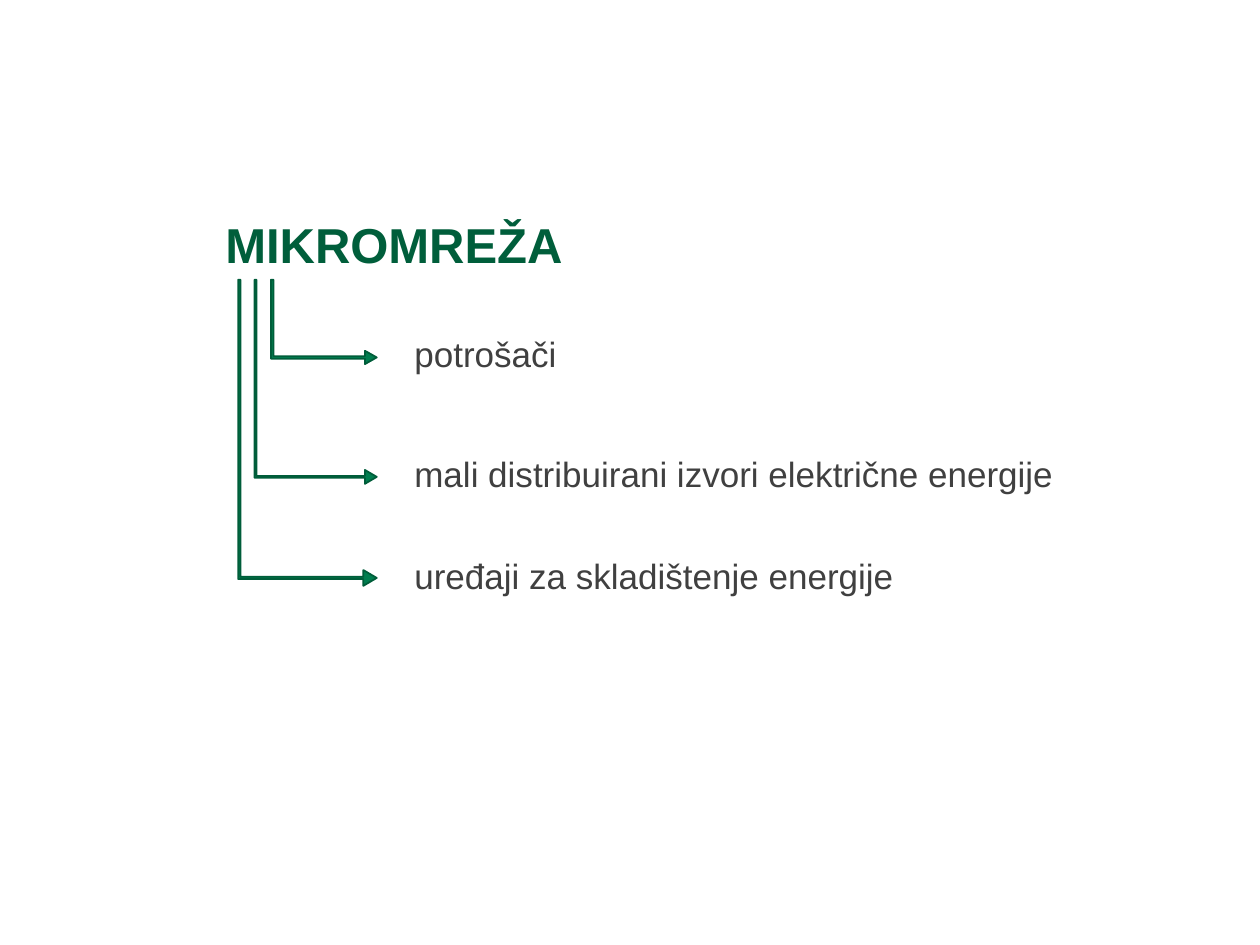
from pptx import Presentation
from pptx.dml.color import RGBColor
from pptx.enum.shapes import MSO_SHAPE
from pptx.enum.text import MSO_AUTO_SIZE
from pptx.util import Inches, Pt

BENT_ARROW = MSO_SHAPE.BENT_UP_ARROW
FIT_SHAPE = MSO_AUTO_SIZE.SHAPE_TO_FIT_TEXT

TITLE_GREEN = RGBColor(0x00, 0x5E, 0x3B)
ARROW_FILL = RGBColor(0x00, 0x7E, 0x4F)
ARROW_LINE = RGBColor(0x00, 0x5D, 0x3A)
TEXT_GRAY = RGBColor(0x40, 0x40, 0x40)

ARROW_TOP = 2.22
ARROW_TIP = 2.99
FIRST_STEM = 2.15
STEM_STEP = 0.13
TIP_OFFSET = 0.3  # from the top of a label to the bottom of its arrow
LABEL_LEFT = 3.19
LABEL_HEIGHT = 0.44

# Label, top, width, arrow adjustments
COMPONENTS = [
    ("potrošači", 2.59, 2.19, (0.031, 0.079, 0.14)),
    ("mali distribuirani izvori električne energije", 3.54, 6.1,
     (0.016, 0.057, 0.097)),
    ("uređaji za skladištenje energije", 4.35, 4.9, (0.016, 0.057, 0.097)),
]


class SlideBuilder:
    font_name = "Arial"

    def __init__(self, slide):
        self.slide = slide

    def text(self, content, left, top, width, height, size, color, bold=False):
        box = self.slide.shapes.add_textbox(
            Inches(left), Inches(top), Inches(width), Inches(height))
        frame = box.text_frame
        frame.word_wrap = True
        frame.auto_size = FIT_SHAPE
        run = frame.paragraphs[0].add_run()
        run.text = content
        run.font.name = self.font_name
        run.font.size = Pt(size)
        run.font.bold = bold
        run.font.color.rgb = color

    def branch_arrow(self, left, top, right, bottom, adjustments):
        """Draw an arrow that runs down and then right within the given bounds."""
        # The shape is turned by 90 degrees, so its width and height swap
        width, height = bottom - top, right - left
        center_x, center_y = (left + right) / 2, (top + bottom) / 2
        shape = self.slide.shapes.add_shape(
            BENT_ARROW, Inches(center_x - width / 2),
            Inches(center_y - height / 2), Inches(width), Inches(height))
        shape.rotation = 90
        for index, value in enumerate(adjustments):
            shape.adjustments[index] = value
        shape.shadow.inherit = False
        shape.fill.solid()
        shape.fill.fore_color.rgb = ARROW_FILL
        shape.line.color.rgb = ARROW_LINE
        shape.line.width = Pt(1)


def main():
    presentation = Presentation()
    presentation.slide_width = Inches(10)
    presentation.slide_height = Inches(7.5)
    slide = presentation.slides.add_slide(presentation.slide_layouts[6])
    builder = SlideBuilder(slide)

    # Heading
    builder.text("MIKROMREŽA", 1.69, 1.65, 4.48, 0.57, 28, TITLE_GREEN, bold=True)

    # Branches, with stems stepping to the left
    for index, (_, top, _, adjustments) in enumerate(COMPONENTS):
        builder.branch_arrow(FIRST_STEM - index * STEM_STEP, ARROW_TOP,
                             ARROW_TIP, top + TIP_OFFSET, adjustments)

    # Labels
    for label, top, width, _ in COMPONENTS:
        builder.text(label, LABEL_LEFT, top, width, LABEL_HEIGHT, 20, TEXT_GRAY)

    presentation.save("out.pptx")


if __name__ == "__main__":
    main()
